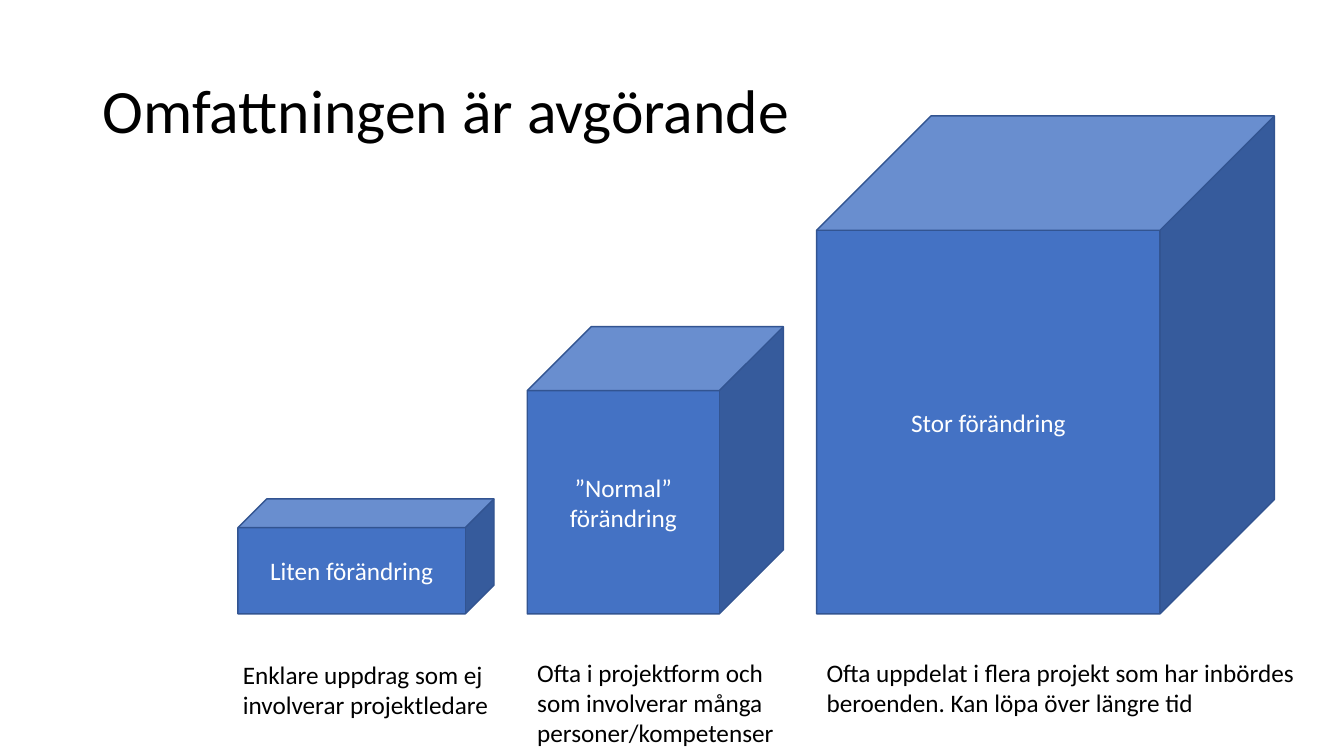
"""Build a slide with three cubes of growing size, each with a caption."""
from pptx import Presentation
from pptx.dml.color import RGBColor
from pptx.enum.shapes import MSO_SHAPE as Shape
from pptx.enum.text import MSO_ANCHOR as Anchor, PP_ALIGN as Align
from pptx.util import Inches, Pt

BLUE = RGBColor(0x44, 0x72, 0xC4)
EDGE = RGBColor(0x32, 0x54, 0x91)
BLACK = RGBColor(0, 0, 0)
WHITE = RGBColor(255, 255, 255)

FONT = "Calibri"
LEFT, PITCH = 2.36, 2.87
BASE, NOTE = 6.09, 6.47

# Cube label, cube width and height, caption, caption shift (x, y), width, height
STEPS = [
    ("Liten förändring", 2.54, 1.14,
     "Enklare uppdrag som ej involverar projektledare", -0.05, 0.02, 2.64, 0.71),
    ("”Normal” förändring", 2.54, 2.85,
     "Ofta i projektform och som involverar många personer/kompetenser",
     0, 0, 2.64, 1.01),
    ("Stor förändring", 4.54, 4.94,
     "Ofta uppdelat i flera projekt som har inbördes beroenden. "
     "Kan löpa över längre tid", 0, 0, 4.86, 0.71),
]


def write(shape, text, size, color, anchor, align=Align.LEFT):
    """Put one styled paragraph in a shape and return it."""
    frame = shape.text_frame
    frame.text = text
    frame.word_wrap = True
    frame.vertical_anchor = anchor
    para = frame.paragraphs[0]
    para.alignment = align
    font = para.runs[0].font
    font.name, font.size, font.color.rgb = FONT, Pt(size), color
    return para


def add_text(slide, box, text, size=18, anchor=Anchor.TOP):
    """Add a black text box and return its paragraph."""
    shape = slide.shapes.add_textbox(*map(Inches, box))
    return write(shape, text, size, BLACK, anchor)


def add_cube(slide, box, label):
    """Add a blue cube with a centred white label."""
    cube = slide.shapes.add_shape(Shape.CUBE, *map(Inches, box))
    cube.shadow.inherit = False
    cube.fill.solid()
    cube.fill.fore_color.rgb = BLUE
    cube.line.color.rgb = EDGE
    cube.line.width = Pt(1)
    write(cube, label, 18, WHITE, Anchor.MIDDLE, Align.CENTER)


def main():
    """Build and save the slide."""
    deck = Presentation()
    deck.slide_width, deck.slide_height = Inches(13.33), Inches(7.5)
    slide = deck.slides.add_slide(deck.slide_layouts[6])
    title = add_text(slide, (0.92, 0.4, 11.5, 1.45),
                     "Omfattningen är avgörande", 44, Anchor.MIDDLE)
    title.line_spacing = 0.9
    for col, (label, wide, high, note, dx, dy, span, tall) in enumerate(STEPS):
        left = LEFT + col * PITCH
        add_cube(slide, (left, BASE - high, wide, high), label)
        add_text(slide, (left + dx, NOTE + dy, span, tall), note)
    deck.save("out.pptx")


if __name__ == "__main__":
    main()
